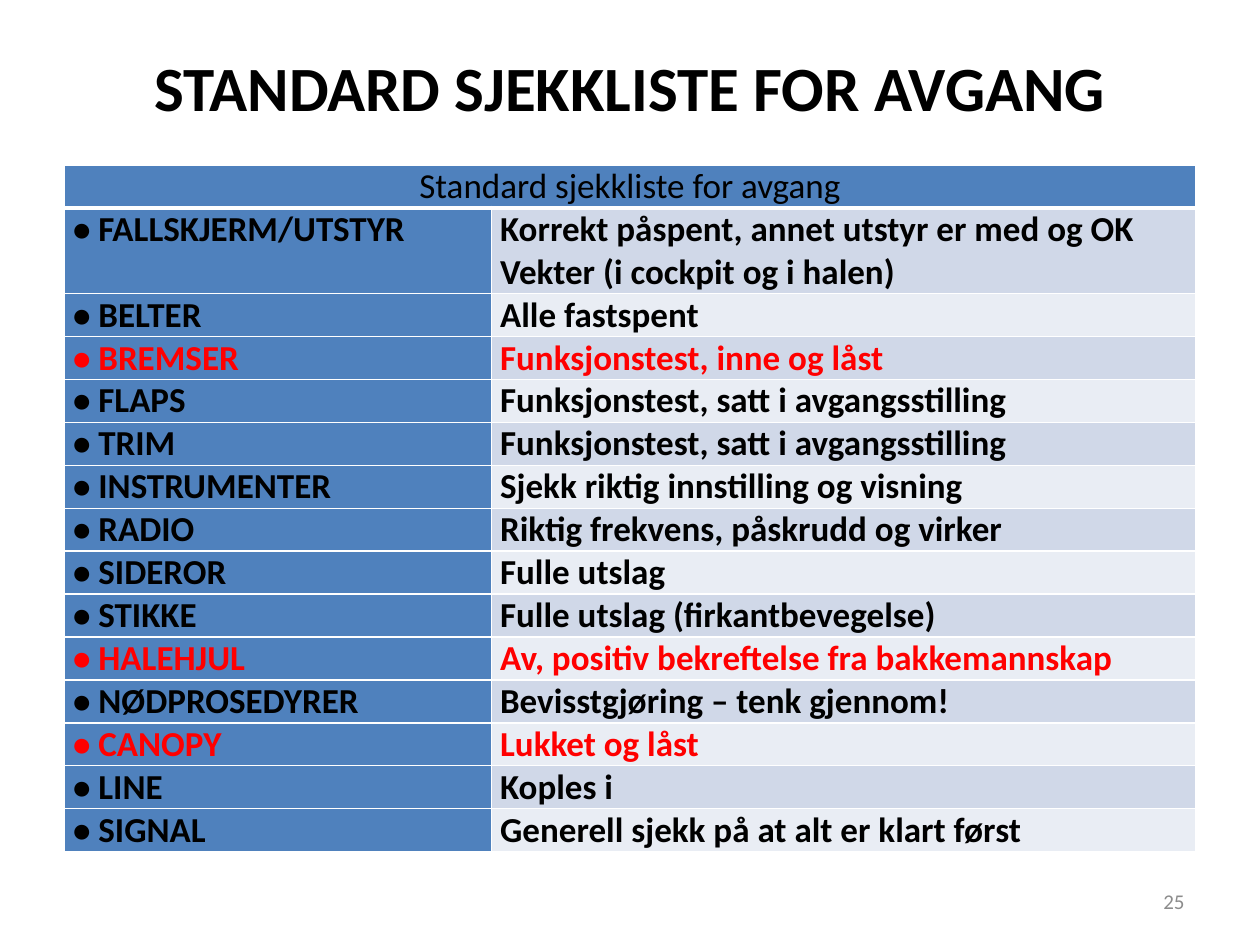
from lxml import etree
from pptx import Presentation
from pptx.dml.color import RGBColor
from pptx.enum.text import MSO_ANCHOR, PP_ALIGN
from pptx.oxml.ns import qn
from pptx.util import Inches, Pt

LEFT, CENTER, RIGHT = PP_ALIGN.LEFT, PP_ALIGN.CENTER, PP_ALIGN.RIGHT
MIDDLE = MSO_ANCHOR.MIDDLE
BLACK = RGBColor(0x00, 0x00, 0x00)
RED = RGBColor(0xFF, 0x00, 0x00)
GRAY = RGBColor(0x8C, 0x8C, 0x8C)
WHITE = RGBColor(0xFF, 0xFF, 0xFF)
BLUE = RGBColor(0x4F, 0x81, 0xBD)
BANDS = (RGBColor(0xD0, 0xD8, 0xE8), RGBColor(0xE9, 0xED, 0xF4))

FONT = "Calibri"
COLUMN_WIDTHS = (3.39, 5.59)
LINE_HEIGHT = 0.34
CELL_INSET = 0.07
CRITICAL = {"BREMSER", "HALEHJUL", "CANOPY"}
CHECKS = [
    ("FALLSKJERM/UTSTYR", "Korrekt påspent, annet utstyr er med og OK Vekter (i cockpit og i halen)"),
    ("BELTER", "Alle fastspent"),
    ("BREMSER", "Funksjonstest, inne og låst"),
    ("FLAPS", "Funksjonstest, satt i avgangsstilling"),
    ("TRIM", "Funksjonstest, satt i avgangsstilling"),
    ("INSTRUMENTER", "Sjekk riktig innstilling og visning"),
    ("RADIO", "Riktig frekvens, påskrudd og virker"),
    ("SIDEROR", "Fulle utslag"),
    ("STIKKE", "Fulle utslag (firkantbevegelse)"),
    ("HALEHJUL", "Av, positiv bekreftelse fra bakkemannskap"),
    ("NØDPROSEDYRER", "Bevisstgjøring – tenk gjennom!"),
    ("CANOPY", "Lukket og låst"),
    ("LINE", "Koples i"),
    ("SIGNAL", "Generell sjekk på at alt er klart først"),
]


def write_text(frame, text, size=20, color=BLACK, bold=False, align=LEFT):
    """Write one formatted paragraph into a text frame."""
    frame.word_wrap = True
    para = frame.paragraphs[0]
    para.alignment = align
    span = para.add_run()
    span.text = text
    span.font.name = FONT
    span.font.size = Pt(size)
    span.font.bold = bold
    span.font.color.rgb = color


def place(box, left, top, width, height):
    """Move and size a shape in inches."""
    box.left, box.top = Inches(left), Inches(top)
    box.width, box.height = Inches(width), Inches(height)


def add_borders(cell, bottom=1, top=1):
    """Draw white lines on the four sides of a cell."""
    properties = cell._tc.get_or_add_tcPr()
    for side, width in (("L", 1), ("R", 1), ("T", top), ("B", bottom)):
        line = etree.SubElement(properties, qn(f"a:ln{side}"), w=str(Pt(width)))
        fill = etree.SubElement(line, qn("a:solidFill"))
        etree.SubElement(fill, qn("a:srgbClr"), val=str(WHITE))


def style_cell(cell, fill, **borders):
    """Set the insets, borders and fill of a cell."""
    cell.margin_left = cell.margin_right = Inches(CELL_INSET)
    cell.margin_top = cell.margin_bottom = 0
    add_borders(cell, **borders)
    cell.fill.solid()
    cell.fill.fore_color.rgb = fill


def add_title(page, text):
    """Fill the title placeholder."""
    title = page.shapes.title
    place(title, 0.5, 0.3, 9, 0.77)
    title.text_frame.vertical_anchor = MIDDLE
    write_text(title.text_frame, text, size=36, bold=True, align=CENTER)


def add_checklist(page, heading, checks):
    """Add the checklist table under a merged heading row."""
    box = page.shapes.add_table(
        len(checks) + 1, len(COLUMN_WIDTHS), Inches(0.51), Inches(1.31),
        Inches(sum(COLUMN_WIDTHS)), Inches(LINE_HEIGHT * (len(checks) + 2)))
    table = box.table
    for column, width in zip(table.columns, COLUMN_WIDTHS):
        column.width = Inches(width)
    for number, row in enumerate(table.rows):
        row.height = Inches(LINE_HEIGHT * (2 if number == 1 else 1))
    for cell in table.rows[0].cells:
        style_cell(cell, BLUE, bottom=3)
    table.cell(0, 0).merge(table.cell(0, 1))
    write_text(table.cell(0, 0).text_frame, heading, align=CENTER)
    for number, (item, action) in enumerate(checks):
        color = RED if item in CRITICAL else BLACK
        fills = (BLUE, BANDS[number % 2])
        cells = table.rows[number + 1].cells
        for cell, text, fill in zip(cells, (f"• {item}", action), fills):
            style_cell(cell, fill, top=3 if number == 0 else 1)
            write_text(cell.text_frame, text, color=color, bold=True)


def add_page_number(page, text):
    """Add the slide number at the lower right."""
    box = page.shapes.add_textbox(Inches(7.17), Inches(6.95), Inches(2.33), Inches(0.4))
    box.text_frame.vertical_anchor = MIDDLE
    write_text(box.text_frame, text, size=12, color=GRAY, align=RIGHT)


def main():
    """Build and save the slide."""
    deck = Presentation()
    deck.slide_width, deck.slide_height = Inches(10), Inches(7.5)
    page = deck.slides.add_slide(deck.slide_layouts[5])
    add_title(page, "STANDARD SJEKKLISTE FOR AVGANG")
    add_checklist(page, "Standard sjekkliste for avgang", CHECKS)
    add_page_number(page, "25")
    deck.save("out.pptx")


if __name__ == "__main__":
    main()
